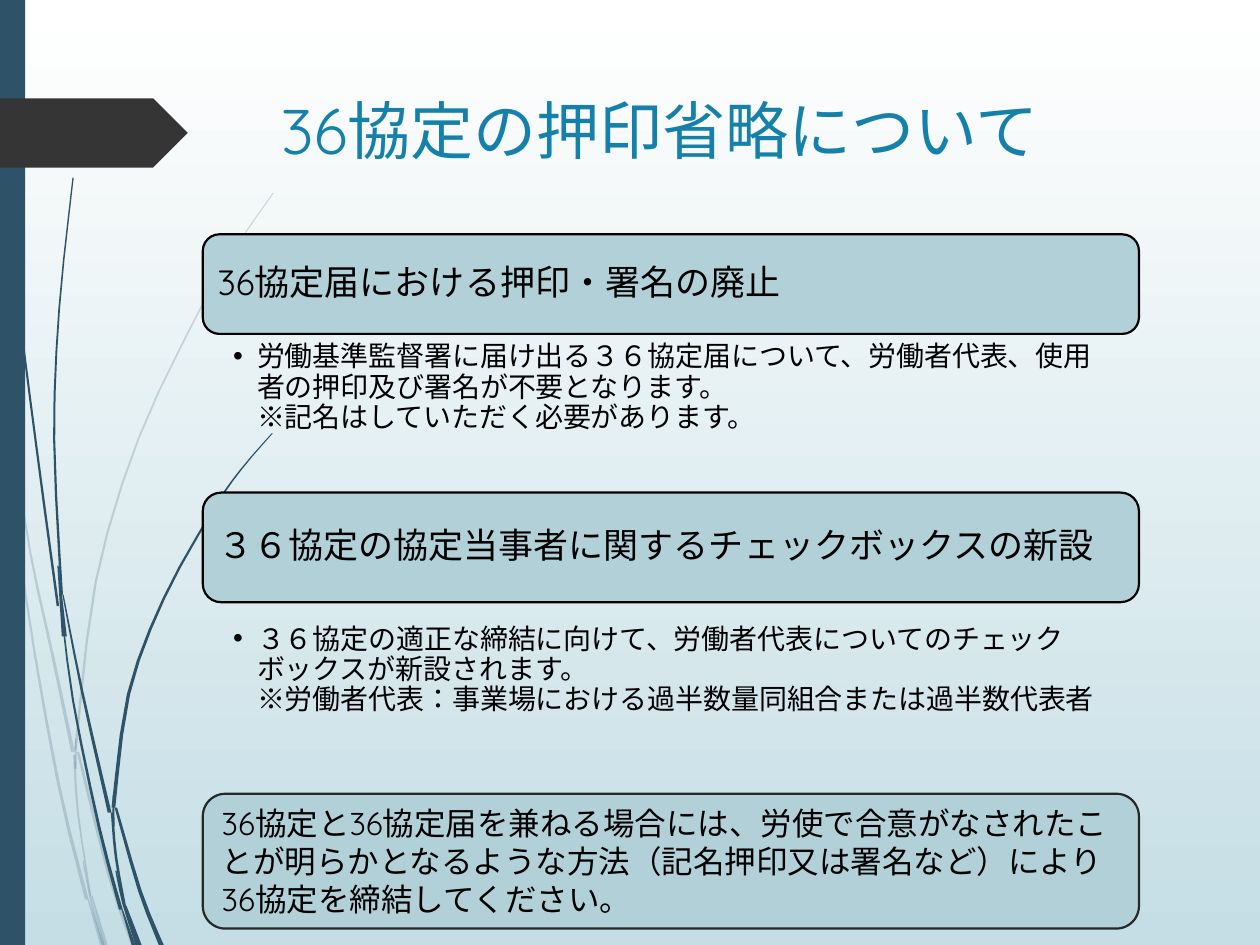
from lxml.etree import SubElement
from pptx import Presentation
from pptx.dml.color import RGBColor
from pptx.enum.shapes import MSO_SHAPE
from pptx.enum.text import MSO_ANCHOR, MSO_AUTO_SIZE, PP_ALIGN
from pptx.oxml.ns import qn
from pptx.util import Inches, Pt

FONT = "Quicksand"
NAVY, BLACK, PALE = "2E5369", "000000", "B2D0D8"

FAINT = [
    (0.01, 0.01, [(0, 2.9), (0.04, 3.18), (0.07, 3.5)]),
    (0.01, 0.03, [(0.1, 3.45), (0.24, 4.38), (0.42, 5.21), (0.58, 5.97)]),
    (0.02, 0.04, [(0.62, 5.97), (0.86, 6.92), (1.06, 7.5)]),
    (0.01, 0.03, [(0.08, 3.5), (0.2, 4.7), (0.46, 6.2), (0.69, 7.14)]),
    (0.01, 0.03, [(0.7, 7.14), (0.81, 7.5)]),
    (0.01, 0.02, [(2.17, 1.53), (1.86, 1.98), (1.59, 2.45), (1.1, 3.48),
                  (0.76, 4.62), (0.6, 5.95)]),
    (0.01, 0.02, [(0.6, 5.86), (0.6, 6.1)]),
    (0.02, 0.01, [(0.59, 5.99), (0.62, 6.46), (0.72, 7.11)]),
    (0.01, 0.02, [(0.66, 6.83), (0.72, 7.14), (0.82, 7.5)]),
    (0.01, 0.03, [(0.73, 7.11), (0.84, 7.5)]),
]
BOLD = [
    (0.01, 0.02, [(0.02, 0), (0.05, 1.1), (0.14, 2.33), (0.29, 3.55), (0.46, 4.81)]),
    (0.01, 0.03, [(0.5, 4.72), (0.65, 5.48), (0.87, 6.45)]),
    (0.02, 0.04, [(0.92, 6.41), (1.11, 7.07), (1.28, 7.5)]),
    (0.01, 0.02, [(0.58, 1.41), (0.47, 2.45), (0.43, 3.49), (0.49, 4.72)]),
    (0.01, 0.04, [(0.46, 4.49), (0.51, 5.05)]),
    (0.01, 0.03, [(0.48, 4.77), (0.58, 5.56), (0.79, 6.58), (0.96, 7.22)]),
    (0.01, 0.03, [(0.97, 7.22), (1.06, 7.5)]),
    (0.01, 0.03, [(2.16, 3.44), (1.91, 3.73), (1.69, 4.05), (1.3, 4.75),
                  (1.02, 5.51), (0.9, 6.41)]),
    (0.01, 0.02, [(0.9, 6.31), (0.9, 6.56)]),
    (0.02, 0.02, [(0.89, 6.45), (0.92, 6.8), (0.99, 7.19)]),
    (0.01, 0.03, [(0.92, 6.91), (0.98, 7.17), (1.09, 7.5)]),
    (0.01, 0.03, [(1, 7.19), (1.11, 7.5)]),
]


def color(code):
    return RGBColor.from_string(code)


def paint(shape, fill, line=None):
    shape.shadow.inherit = False
    shape.fill.solid()
    shape.fill.fore_color.rgb = color(fill)
    if line:
        shape.line.color.rgb = color(line)
        shape.line.width = Pt(1.25)
    else:
        shape.line.fill.background()


def place(shape, box):
    shape.left, shape.top, shape.width, shape.height = map(Inches, box)


def write(shape, text, size, code, anchor, pads):
    frame = shape.text_frame
    frame.text = text
    frame.word_wrap = True
    frame.auto_size = MSO_AUTO_SIZE.NONE
    frame.vertical_anchor = anchor
    (frame.margin_left, frame.margin_top,
     frame.margin_right, frame.margin_bottom) = map(Inches, pads)
    para = frame.paragraphs[0]
    para.alignment = PP_ALIGN.LEFT
    para.space_before = Pt(0)
    for run in para.runs:
        run.font.name = FONT
        run.font.size = Pt(size)
        run.font.color.rgb = color(code)
        props = run._r.get_or_add_rPr()
        props.set("lang", "ja-JP")
        SubElement(props, qn("a:ea")).set("typeface", FONT)
    for gap in para._p.findall(qn("a:br")):
        SubElement(gap, qn("a:rPr")).set("sz", str(size * 100))
    return para


def curve(knots, steps=3):
    if len(knots) == 2:
        return knots
    ends = [knots[0], *knots, knots[-1]]
    dots = []
    for a, b, c, d in zip(ends, ends[1:], ends[2:], ends[3:]):
        for step in range(steps):
            t = step / steps
            dots.append(tuple(
                q + t * (r - p) / 2 + t * t * (p - 2.5 * q + 2 * r - s / 2)
                + t ** 3 * (1.5 * (q - r) + (s - p) / 2)
                for p, q, r, s in zip(a, b, c, d)))
    return dots + [knots[-1]]


def stem(slide, start, end, knots, alpha=None):
    dots = curve(knots)
    left, right = [], []
    for i, (x, y) in enumerate(dots):
        half = (start + (end - start) * i / (len(dots) - 1)) / 2
        left.append((x - half, y))
        right.append((x + half, y))
    edge = [(Inches(max(x, 0)), Inches(y)) for x, y in left + right[::-1]]
    pen = slide.shapes.build_freeform(*edge[0])
    pen.add_line_segments(edge[1:], close=True)
    blade = pen.convert_to_shape()
    paint(blade, NAVY)
    if alpha:
        tint = blade._element.spPr.find(".//" + qn("a:srgbClr"))
        SubElement(tint, qn("a:alpha")).set("val", str(alpha * 1000))


def decor(slide, box):
    left, top, width, height = box
    fill = slide.background.fill
    fill.gradient()
    fill.gradient_angle = 270
    for stop, code in zip(fill.gradient_stops, ("FFFFFF", "C5DEE5")):
        stop.color.rgb = color(code)
    for row in FAINT:
        stem(slide, *row, alpha=20)
    for row in BOLD:
        stem(slide, *row)
    for kind, part, code in (
            (MSO_SHAPE.RECTANGLE, (left, top, 0.2, height), NAVY),
            (MSO_SHAPE.PENTAGON, (left, top + 0.78, 1.49, 0.55), "353535")):
        paint(slide.shapes.add_shape(kind, *map(Inches, part)), code)


def head(slide, box, text):
    title = slide.shapes.title
    place(title, box)
    write(title, text, 36, "1581AA", MSO_ANCHOR.TOP, (0.1, 0.05, 0.1, 0.05))


def panel(slide, box, text, size, line, pad):
    shape = slide.shapes.add_shape(MSO_SHAPE.ROUNDED_RECTANGLE, *map(Inches, box))
    paint(shape, PALE, line)
    return write(shape, text, size, BLACK, MSO_ANCHOR.MIDDLE, pad)


def topic(slide, box, bar, gap, body, name, text):
    left, top, width, height = box
    para = panel(slide, (left, top, width, bar), name, 20, BLACK, (0.08,) * 4)
    para.line_spacing = 0.9
    place(body, (left, top + bar + gap, width, height - bar - gap))
    para = write(body, text, 16, BLACK, MSO_ANCHOR.TOP, (0.24, 0.03, 0.16, 0.03))
    para.line_spacing = 0.9
    props = para._p.get_or_add_pPr()
    props.set("marL", str(Inches(0.19)))
    props.set("indent", str(-Inches(0.19)))
    SubElement(props, qn("a:buFont")).set("typeface", "Arial")
    SubElement(props, qn("a:buChar")).set("char", "•")


def main():
    deck = Presentation()
    deck.slide_width, deck.slide_height = Inches(10), Inches(7.5)
    slide = deck.slides.add_slide(deck.slide_layouts[3])
    first, second = slide.placeholders[1], slide.placeholders[2]
    decor(slide, (0, 0, 10, 7.5))
    head(slide, (2.13, 0.68, 7.21, 1.4), "36協定の押印省略について")
    topic(slide, (1.61, 1.86, 7.43, 2.24), 0.79, 0.04, first,
          "36協定届における押印・署名の廃止",
          "労働基準監督署に届け出る３６協定届について、労働者代表、使用者の押印及び署名が"
          "不要となります。\v※記名はしていただく必要があります。")
    topic(slide, (1.61, 3.91, 7.43, 2.84), 0.87, 0.15, second,
          "３６協定の協定当事者に関するチェックボックスの新設",
          "３６協定の適正な締結に向けて、労働者代表についてのチェックボックスが"
          "新設されます。\v※労働者代表：事業場における過半数量同組合または過半数代表者")
    panel(slide, (1.61, 6.3, 7.43, 1.07),
          "36協定と36協定届を兼ねる場合には、労使で合意がなされたことが明らかとなるような"
          "方法（記名押印又は署名など）により36協定を締結してください。",
          18, "272727", (0.1, 0.05, 0.1, 0.05))
    deck.save("out.pptx")


if __name__ == "__main__":
    main()
